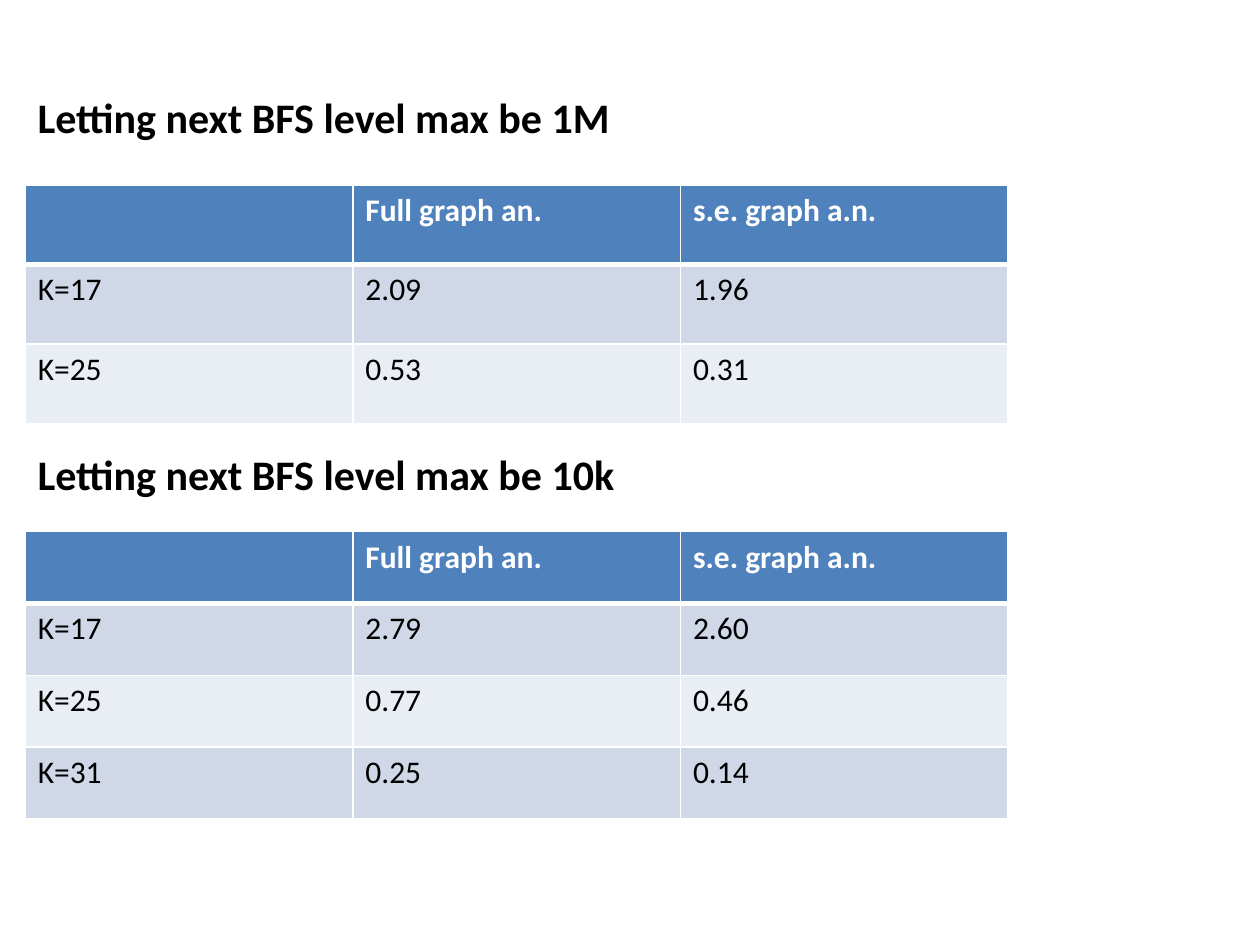
from lxml import etree
from pptx import Presentation
from pptx import util as u
from pptx.dml.color import RGBColor
from pptx.enum import text
from pptx.oxml.ns import qn

LEFT, WIDTH = 0.2, 7.8
HEAD = ["", "Full graph an.", "s.e. graph a.n."]
PARTS = [
    {"title": "Letting next BFS level max be 1M", "y": 0.68, "wide": 4.87,
     "top": 1.47, "step": 0.63,
     "rows": [["K=17", "2.09", "1.96"], ["K=25", "0.53", "0.31"]]},
    {"title": "Letting next BFS level max be 10k", "y": 3.51, "wide": 4.84,
     "top": 4.22, "step": 0.57,
     "rows": [["K=17", "2.79", "2.60"], ["K=25", "0.77", "0.46"],
              ["K=31", "0.25", "0.14"]]},
]


def color(code):
    return RGBColor.from_string(code)


class Deck:
    """Holds the text and table style and the current slide."""
    font = "Calibri"
    head = "4F81BD"
    bands = ["D0D8E8", "E9EDF4"]
    rule = "FFFFFF"

    def __init__(self, slide):
        self.slide = slide

    def label(self, para, words, ink, **form):
        run = para.add_run()
        run.text = words
        for key, value in {"name": self.font, **form}.items():
            setattr(run.font, key, value)
        run.font.color.rgb = color(ink)

    def title(self, words, x, y, w, h):
        box = self.slide.shapes.add_textbox(*map(u.Inches, (x, y, w, h)))
        frame = box.text_frame
        form = {"word_wrap": False, "auto_size": text.MSO_AUTO_SIZE.SHAPE_TO_FIT_TEXT}
        for key, value in form.items():
            setattr(frame, key, value)
        self.label(frame.paragraphs[0], words, "000000", size=u.Pt(24), bold=True)

    def border(self, cell, row):
        """Rule all four sides, with a thick line under the header."""
        props = cell._tc.get_or_add_tcPr()
        thick = {(0, "B"), (1, "T")}
        for side in "LRTB":
            wide = u.Pt(3 if (row, side) in thick else 1)
            line = etree.SubElement(props, qn(f"a:ln{side}"), w=str(int(wide)))
            fill = etree.SubElement(line, qn("a:solidFill"))
            etree.SubElement(fill, qn("a:srgbClr"), val=self.rule)

    def table(self, rows, x, y, w, step):
        size = len(rows), len(rows[0])
        place = map(u.Inches, (x, y, w, step * len(rows)))
        grid = self.slide.shapes.add_table(*size, *place).table
        for r, row in enumerate(rows):
            grid.rows[r].height = u.Inches(step)
            top = r == 0
            for c, words in enumerate(row):
                cell = grid.cell(r, c)
                self.border(cell, r)
                cell.fill.solid()
                cell.fill.fore_color.rgb = color(self.head if top else self.bands[(r - 1) % 2])
                if words:
                    self.label(cell.text_frame.paragraphs[0], words,
                               "FFFFFF" if top else "000000", size=u.Pt(18), bold=top)


def main():
    show = Presentation()
    show.slide_width, show.slide_height = u.Inches(10), u.Inches(7.5)
    deck = Deck(show.slides.add_slide(show.slide_layouts[6]))
    for part in PARTS:
        deck.title(part["title"], LEFT, part["y"], part["wide"], 0.5)
        deck.table([HEAD] + part["rows"], LEFT, part["top"], WIDTH, part["step"])
    show.save("out.pptx")


if __name__ == "__main__":
    main()
